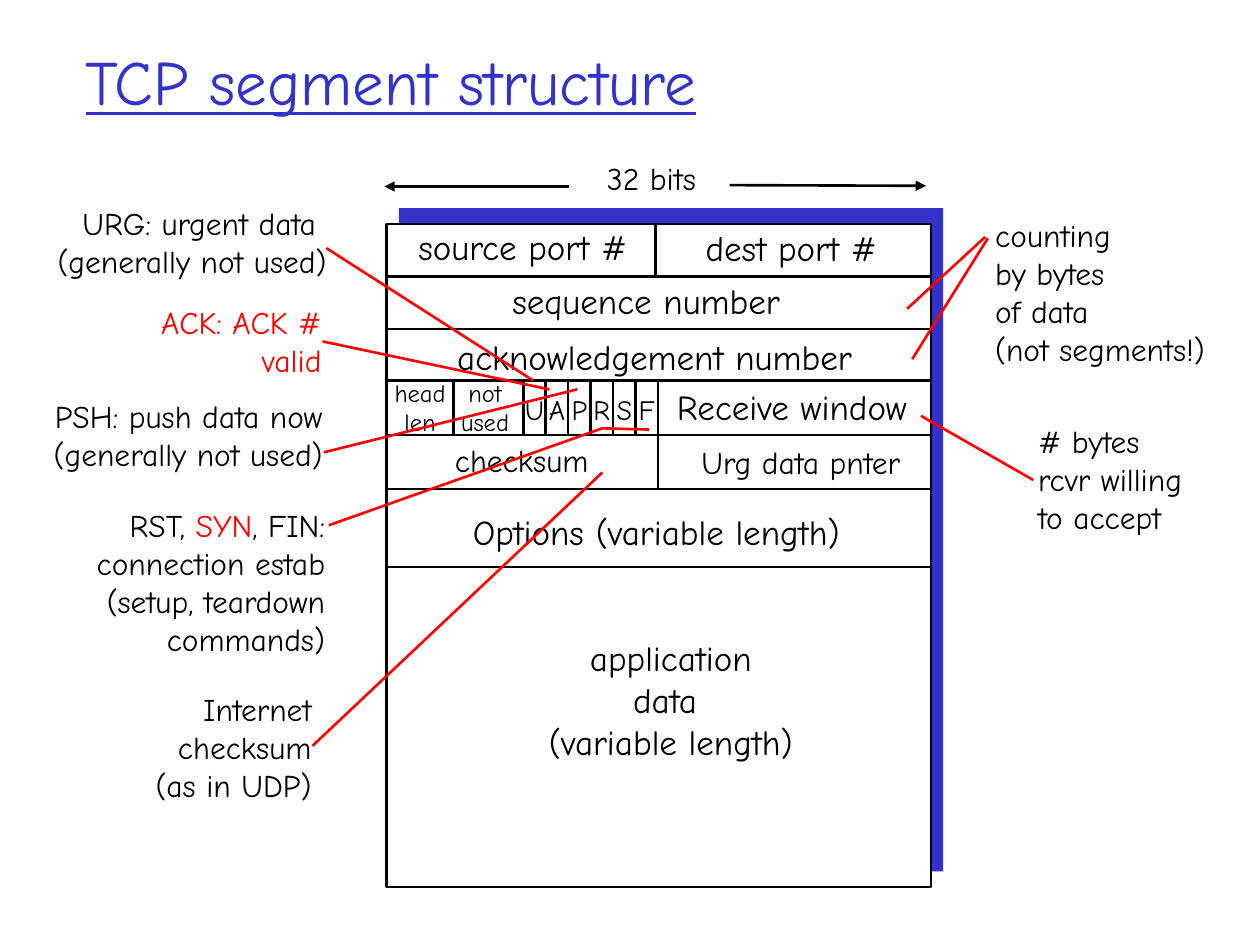
from dataclasses import dataclass

from lxml.etree import SubElement
from pptx import Presentation
from pptx.dml.color import RGBColor
from pptx.enum.shapes import MSO_CONNECTOR, MSO_SHAPE
from pptx.enum.text import MSO_ANCHOR, MSO_AUTO_SIZE, PP_ALIGN
from pptx.oxml.ns import qn
from pptx.util import Pt


@dataclass(frozen=True)
class Theme:
    font: str = "Comic Neue"
    ink: RGBColor = RGBColor(0, 0, 0)
    paper: RGBColor = RGBColor(255, 255, 255)
    accent: RGBColor = RGBColor(0x33, 0x33, 0xCC)
    callout: RGBColor = RGBColor(255, 0, 0)
    title_size: int = 36
    field_size: int = 20
    note_size: int = 18
    flag_size: int = 16
    small_size: int = 14
    stroke: float = 1.5


THEME = Theme()
LEFT, TOP, WIDTH, HEIGHT = 221, 128, 311, 379
RIGHT = LEFT + WIDTH
ROW_LINES = SEQUENCE, ACKNOWLEDGEMENT, FLAGS, CHECKSUM, OPTIONS, DATA = (
    158, 188, 217.5, 248.5, 279.5, 324)
PORT_SPLIT, HALF_SPLIT = 374.5, 376
HEAD_SPLIT, FLAGS_LEFT = 259, 299


def add_run(paragraph, wording, size, color):
    run = paragraph.add_run()
    run.text = wording
    run.font.name = THEME.font
    run.font.size = Pt(size)
    run.font.color.rgb = color
    return run


def add_title(slide, wording):
    title = slide.shapes.add_textbox(Pt(41.8), Pt(15.1), Pt(612), Pt(61.2))
    frame = title.text_frame
    frame.word_wrap = True
    frame.vertical_anchor = MSO_ANCHOR.MIDDLE
    run = add_run(frame.paragraphs[0], wording, THEME.title_size, THEME.accent)
    run.font.underline = True


def add_label(slide, left, top, width, lines, size=THEME.field_size,
              align=PP_ALIGN.CENTER, color=THEME.ink):
    height = len(lines) * size * 1.2 + 7.2
    label = slide.shapes.add_textbox(Pt(left), Pt(top), Pt(width), Pt(height))
    frame = label.text_frame
    frame.word_wrap = False
    frame.auto_size = MSO_AUTO_SIZE.SHAPE_TO_FIT_TEXT
    for index, line in enumerate(lines):
        paragraph = frame.add_paragraph() if index else frame.paragraphs[0]
        paragraph.alignment = align
        parts = [(line, color)] if isinstance(line, str) else line
        for wording, part_color in parts:
            add_run(paragraph, wording, size, part_color)


def add_panel(slide, left, top, fill, outline=None):
    panel = slide.shapes.add_shape(
        MSO_SHAPE.RECTANGLE, Pt(left), Pt(top), Pt(WIDTH), Pt(HEIGHT))
    panel.shadow.inherit = False
    panel.fill.solid()
    panel.fill.fore_color.rgb = fill
    if outline is None:
        panel.line.fill.background()
    else:
        panel.line.color.rgb = outline
        panel.line.width = Pt(THEME.stroke)


def add_line(slide, start, end, color=THEME.ink, arrow=False):
    line = slide.shapes.add_connector(
        MSO_CONNECTOR.STRAIGHT, *(Pt(value) for value in (*start, *end)))
    line.line.color.rgb = color
    line.line.width = Pt(THEME.stroke)
    if arrow:
        SubElement(line.line._get_or_add_ln(), qn("a:tailEnd"), type="triangle")
    SubElement(line._element.spPr, qn("a:effectLst"))


def add_bent_callout(slide, start, *points):
    builder = slide.shapes.build_freeform(*(Pt(value) for value in start))
    builder.add_line_segments([(Pt(x), Pt(y)) for x, y in points], close=False)
    callout = builder.convert_to_shape()
    callout.shadow.inherit = False
    callout.fill.background()
    callout.line.color.rgb = THEME.callout
    callout.line.width = Pt(THEME.stroke)


def add_flags(slide, names):
    step = (HALF_SPLIT - FLAGS_LEFT) / len(names)
    box_width = 25
    for index, name in enumerate(names):
        cell_left = FLAGS_LEFT + index * step
        add_line(slide, (cell_left, FLAGS), (cell_left, CHECKSUM))
        add_label(slide, cell_left + (step - box_width) / 2, 220.5, box_width,
                  [name], THEME.flag_size)


def add_segment(slide):
    add_panel(slide, 228, 119, THEME.accent)
    add_panel(slide, LEFT, TOP, THEME.paper, THEME.ink)
    for row in ROW_LINES:
        add_line(slide, (LEFT, row), (RIGHT, row))
    for x, upper, lower in (
        (PORT_SPLIT, TOP, SEQUENCE),
        (HEAD_SPLIT, FLAGS, CHECKSUM),
        (HALF_SPLIT, FLAGS, OPTIONS),
    ):
        add_line(slide, (x, upper), (x, lower))
    for left, top, width, lines, size in (
        (226, 125.3, 145.5, ["source port #"], THEME.field_size),
        (389.5, 126, 125.3, ["dest port #"], THEME.field_size),
        (271.4, 156.3, 195.8, ["sequence number"], THEME.field_size),
        (239.8, 188, 268.6, ["acknowledgement number"], THEME.field_size),
        (217.4, 212.4, 45.4, ["head", "len"], THEME.small_size),
        (254.9, 212.4, 44.6, ["not", "used"], THEME.small_size),
        (373.7, 216.7, 157.7, ["Receive window"], THEME.field_size),
        (250.6, 248.4, 95, ["checksum"], THEME.note_size),
        (387.4, 249.8, 140.4, ["Urg data pnter"], THEME.note_size),
        (252, 288, 246.2, ["Options (variable length)"], THEME.field_size),
        (299.5, 360, 167.8, ["application", "data ", "(variable length)"],
         THEME.field_size),
    ):
        add_label(slide, left, top, width, lines, size)
    add_flags(slide, "UAPRSF")


def add_width_marker(slide):
    add_label(slide, 334.8, 87.1, 74.9, ["32 bits"], THEME.note_size)
    add_line(slide, (325.4, 106.6), (219.6, 106.6), arrow=True)
    add_line(slide, (416.9, 105.8), (529.2, 106.2), arrow=True)


def add_notes(slide):
    handshake = [("RST, ", THEME.ink), ("SYN", THEME.callout), (", FIN:", THEME.ink)]
    for left, top, width, lines, align, color in (
        (13.7, 113, 180, ["URG: urgent data ", "(generally not used)"],
         PP_ALIGN.RIGHT, THEME.ink),
        (74.9, 169.9, 115.9, ["ACK: ACK #", "valid"],
         PP_ALIGN.RIGHT, THEME.callout),
        (11.5, 223.2, 180, ["PSH: push data now", "(generally not used)"],
         PP_ALIGN.RIGHT, THEME.ink),
        (37.4, 285.8, 155.5,
         [handshake, "connection estab", "(setup, teardown", "commands)"],
         PP_ALIGN.RIGHT, THEME.ink),
        (78.5, 391, 106.6, ["Internet", "checksum", "(as in UDP)"],
         PP_ALIGN.RIGHT, THEME.ink),
        (586.1, 237.6, 105.8, ["# bytes", "rcvr willing", "to accept"],
         PP_ALIGN.LEFT, THEME.ink),
        (561.6, 120.2, 143.3,
         ["counting", "by bytes", "of data", "(not segments!)"],
         PP_ALIGN.LEFT, THEME.ink),
    ):
        add_label(slide, left, top, width, lines, THEME.note_size, align, color)
    for start, end in (
        ((186.5, 141.8), (304.6, 217.4)),
        ((184.3, 195.1), (313.9, 222.5)),
        ((185, 258.5), (329.8, 222.5)),
        ((178.6, 426.2), (344.2, 270)),
        ((590.4, 274.3), (526.3, 237.6)),
        ((564.5, 136.1), (521.3, 205.2)),
        ((563, 135.4), (518.4, 176.4)),
    ):
        add_line(slide, start, end, THEME.callout)
    add_bent_callout(slide, (187.9, 300.2), (344.2, 244.8), (370.8, 245.5))


def main():
    presentation = Presentation()
    presentation.slide_width = Pt(720)
    presentation.slide_height = Pt(540)
    slide = presentation.slides.add_slide(presentation.slide_layouts[6])
    add_title(slide, "TCP segment structure")
    add_segment(slide)
    add_width_marker(slide)
    add_notes(slide)
    presentation.save("out.pptx")


if __name__ == "__main__":
    main()
